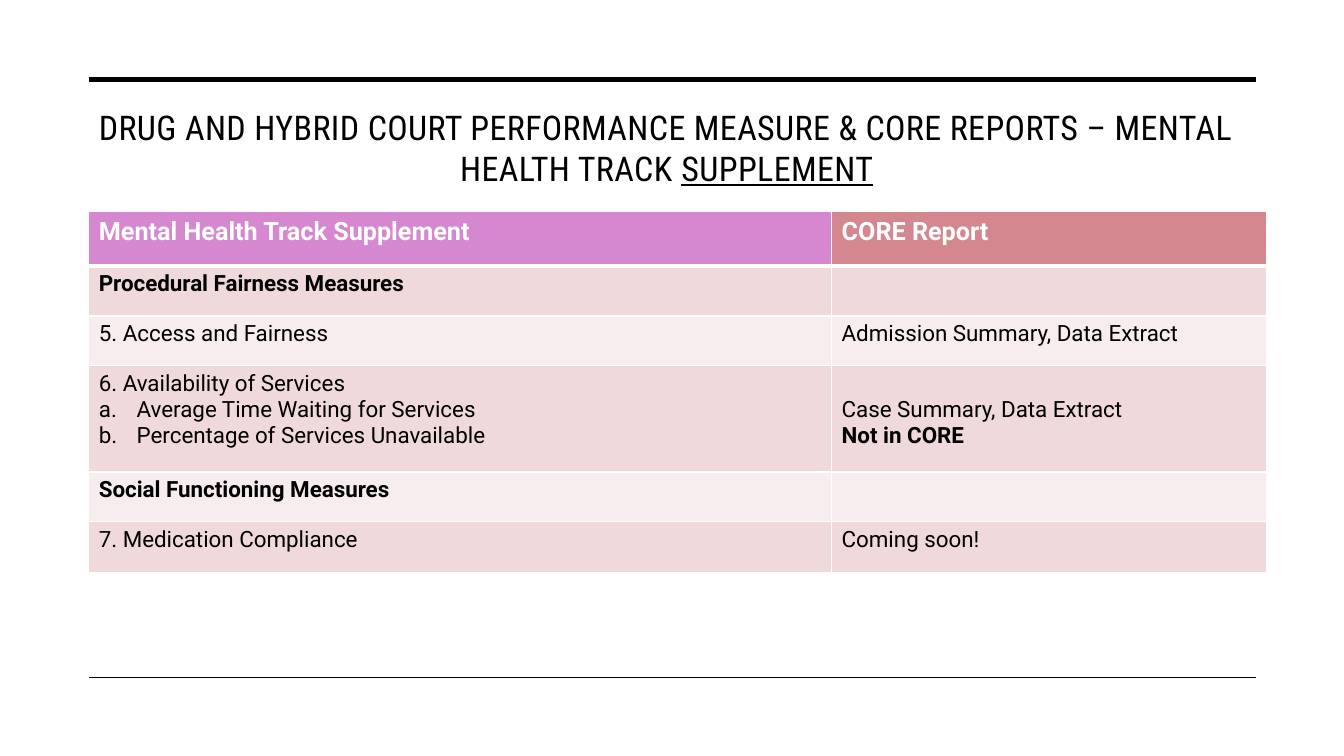
from pptx import Presentation
from pptx.dml.color import RGBColor
from pptx.enum.shapes import MSO_CONNECTOR as Conn
from pptx.enum.text import MSO_ANCHOR as Anchor, PP_ALIGN as Align
from pptx.oxml.ns import qn
from pptx.util import Pt
from lxml.etree import SubElement

BLACK, WHITE = "000000", "FFFFFF"
HEADER_FILLS = ["D587D0", "D5878F"]
BAND_FILLS = ["F7EDEE", "EFD9DB"]
LINE_STEP = 18.75


def color(value):
    return RGBColor.from_string(value)


def add_text(p, text, size=16, font="Roboto", fill=BLACK, bold=False,
             underline=False, spacing=0):
    r = p.add_run()
    r.text = text
    f = r.font
    f.size, f.name, f.bold, f.underline = Pt(size), font, bold, underline
    f.color.rgb = color(fill)
    if spacing:
        r._r.get_or_add_rPr().set("spc", str(round(spacing * 100)))


class Deck:
    def __init__(self):
        self.prs = Presentation()
        self.prs.slide_width, self.prs.slide_height = Pt(960), Pt(540)
        self.s = self.prs.slides.add_slide(self.prs.slide_layouts[6])

    def rule(self, y, width):
        sp = self.s.shapes.add_connector(
            Conn.STRAIGHT, Pt(63.4), Pt(y), Pt(897.1), Pt(y))
        sp.line.color.rgb = color(BLACK)
        sp.line.width = Pt(width)
        SubElement(sp._element.spPr, qn("a:effectLst"))

    def title(self, text, underlined):
        sp = self.s.shapes.add_textbox(Pt(55.4), Pt(72.7), Pt(841.7), Pt(78.5))
        tf = sp.text_frame
        tf.word_wrap = True
        tf.vertical_anchor = Anchor.TOP
        p = tf.paragraphs[0]
        p.alignment = Align.CENTER
        style = dict(size=24.3, font="Roboto Condensed", spacing=0.3)
        add_text(p, text, **style)
        add_text(p, underlined, underline=True, **style)

    def table(self, rows, widths, heights):
        frame = self.s.shapes.add_table(
            len(rows), len(widths), Pt(63.4), Pt(151.2),
            Pt(sum(widths)), Pt(sum(heights)))
        table = frame.table
        table.horz_banding = False
        for column, width in zip(table.columns, widths):
            column.width = Pt(width)
        for i, (row, height) in enumerate(zip(rows, heights)):
            table.rows[i].height = Pt(height)
            for j, lines in enumerate(row):
                cell = table.cell(i, j)
                self.borders(cell, top=3 if i == 1 else 1,
                             bottom=3 if i == 0 else 1)
                cell.fill.solid()
                cell.fill.fore_color.rgb = color(
                    BAND_FILLS[i % 2] if i else HEADER_FILLS[j])
                self.cell_text(cell, lines, header=i == 0)
        return table

    def borders(self, cell, top, bottom):
        tc_pr = cell._tc.get_or_add_tcPr()
        for side, width in zip("LRTB", (1, 1, top, bottom)):
            ln = SubElement(tc_pr, qn(f"a:ln{side}"), w=str(Pt(width)))
            fill = SubElement(ln, qn("a:solidFill"))
            SubElement(fill, qn("a:srgbClr"), val=WHITE)

    def cell_text(self, cell, lines, header):
        tf = cell.text_frame
        for k, (text, kind) in enumerate(lines):
            p = tf.add_paragraph() if k else tf.paragraphs[0]
            add_text(p, text, size=18 if header else 16,
                     fill=WHITE if header else BLACK,
                     bold=header or kind == "bold")
            if kind == "lettered":
                p_pr = p._p.get_or_add_pPr()
                p_pr.set("marL", str(Pt(27)))
                p_pr.set("indent", str(-Pt(27)))
                SubElement(p_pr, qn("a:buFont"), typeface="+mj-lt")
                SubElement(p_pr, qn("a:buAutoNum"), type="alphaLcPeriod")


def main():
    deck = Deck()

    # Rules and title
    deck.rule(56.9, 3.5)
    deck.rule(483.8, 1)
    deck.title("DRUG AND HYBRID COURT PERFORMANCE MEASURE & CORE REPORTS – "
               "MENTAL HEALTH TRACK ", "SUPPLEMENT")

    # Measures and the reports that cover them
    rows = [
        [[("Mental Health Track Supplement", "")], [("CORE Report", "")]],
        [[("Procedural Fairness Measures", "bold")], []],
        [[("5. Access and Fairness", "")],
         [("Admission Summary, Data Extract", "")]],
        [[("6. Availability of Services", ""),
          ("Average Time Waiting for Services", "lettered"),
          ("Percentage of Services Unavailable", "lettered")],
         [("Case Summary, Data Extract", ""), ("Not in CORE", "bold")]],
        [[("Social Functioning Measures", "bold")], []],
        [[("7. Medication Compliance", "")], [("Coming soon!", "")]],
    ]
    table = deck.table(rows, widths=[530.6, 311],
                       heights=[39, 35.5, 35.5, 76, 35.5, 36.5])

    # Line the reports up with the lettered services
    table.cell(3, 1).margin_top = Pt(3.6 + LINE_STEP)

    deck.prs.save("out.pptx")


if __name__ == "__main__":
    main()
